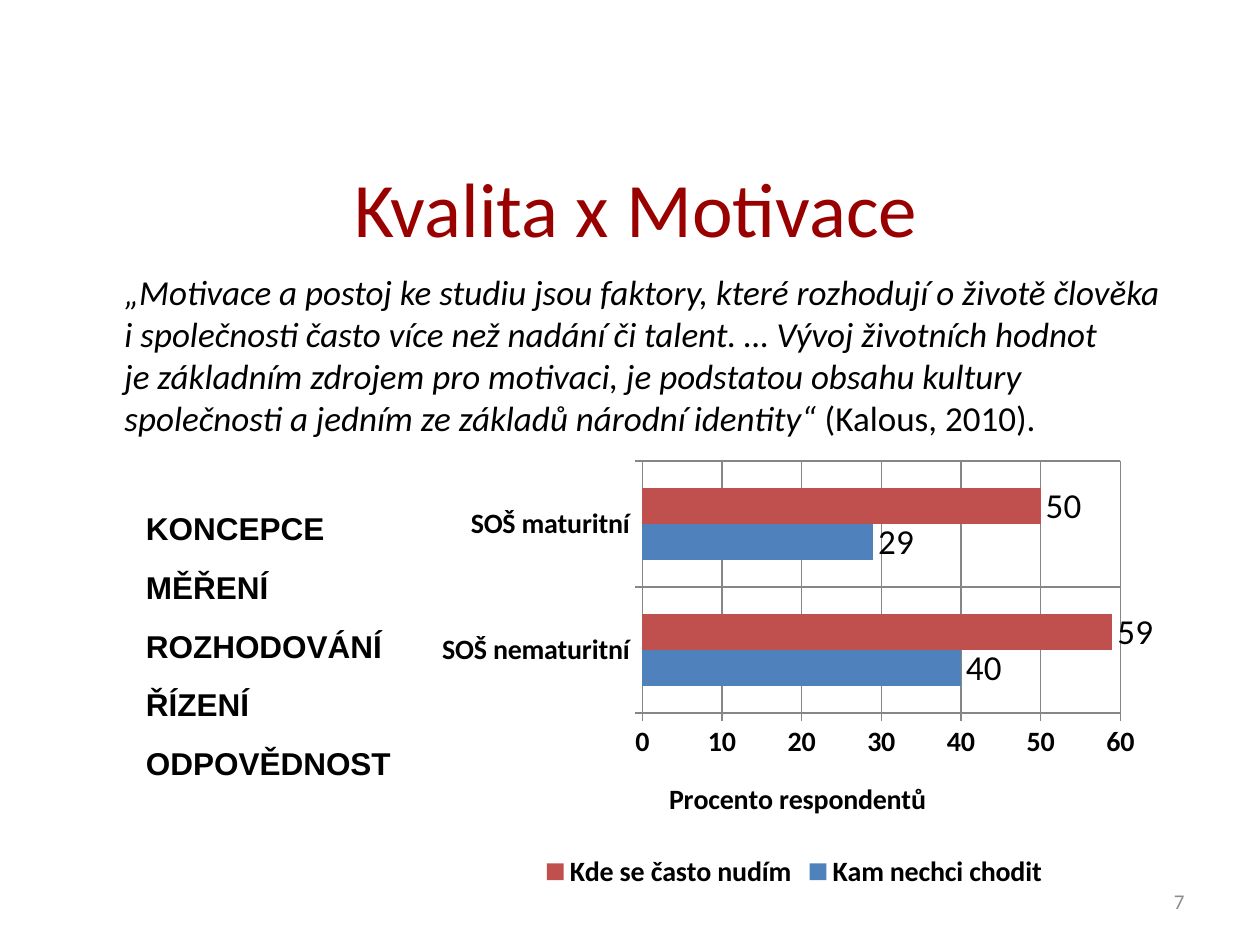
from dataclasses import dataclass

from lxml.etree import SubElement
from pptx import Presentation
from pptx.chart.data import CategoryChartData
from pptx.dml.color import RGBColor
from pptx.enum.chart import XL_CHART_TYPE as ChartType
from pptx.enum.chart import XL_LABEL_POSITION as LabelPosition
from pptx.enum.chart import XL_LEGEND_POSITION as LegendPosition
from pptx.enum.chart import XL_TICK_MARK as TickMark
from pptx.enum.text import MSO_ANCHOR as Anchor
from pptx.enum.text import PP_ALIGN as Align
from pptx.oxml.ns import qn
from pptx.util import Inches, Pt

BLACK, DARK_RED, GRAY, GRID = "000000", "990000", "8C8C8C", "868686"


@dataclass
class Area:
    left: float
    top: float
    width: float
    height: float

    def lengths(self) -> list:
        return [Inches(v) for v in (self.left, self.top, self.width, self.height)]


@dataclass
class Series:
    name: str
    values: tuple
    color: str


def rgb(value: str) -> RGBColor:
    return RGBColor.from_string(value)


def style_font(font, size: float, color: str = BLACK, name: str = "Calibri",
               bold: bool = False, italic: bool = False) -> None:
    font.size, font.name, font.bold, font.italic = Pt(size), name, bold, italic
    font.color.rgb = rgb(color)


def add_box(page, area: Area, anchor=Anchor.TOP):
    frame = page.shapes.add_textbox(*area.lengths()).text_frame
    frame.word_wrap = True
    frame.vertical_anchor = anchor
    return frame


def set_layout(parent, index: int, **settings) -> None:
    """Give a chart part a manual layout in fractions of the chart."""
    for old in parent.findall(qn("c:layout")):
        parent.remove(old)
    layout = SubElement(parent, qn("c:layout"))
    parent.insert(index, layout)
    manual = SubElement(layout, qn("c:manualLayout"))
    for tag, value in settings.items():
        SubElement(manual, qn(f"c:{tag}")).set("val", str(value))


def style_axis(axis) -> None:
    style_font(axis.tick_labels.font, 16, bold=True)
    axis.major_tick_mark = TickMark.OUTSIDE
    axis.minor_tick_mark = TickMark.NONE
    axis.has_major_gridlines = True
    for line in (axis.format.line, axis.major_gridlines.format.line):
        line.color.rgb = rgb(GRID)
        line.width = Pt(0.75)


def add_bar_chart(page, area: Area, categories: list, series_list: list) -> None:
    data = CategoryChartData()
    data.categories = categories
    for series in series_list:
        data.add_series(series.name, series.values)
    chart = page.shapes.add_chart(ChartType.BAR_CLUSTERED, *area.lengths(), data).chart
    chart.has_title = False
    style_font(chart.font, 10)

    # Bars and value labels
    plot = chart.plots[0]
    plot.gap_width, plot.overlap, plot.vary_by_categories = 150, 0, False
    for bars, series in zip(plot.series, series_list):
        bars.format.fill.solid()
        bars.format.fill.fore_color.rgb = rgb(series.color)
        labels = bars.data_labels
        labels.show_value = True
        labels.position = LabelPosition.OUTSIDE_END
        style_font(labels.font, 20)

    # Axes
    style_axis(chart.category_axis)
    values = chart.value_axis
    style_axis(values)
    values.minimum_scale, values.maximum_scale, values.major_unit = 0, 60, 10
    title = values.axis_title
    title.text_frame.text = "Procento respondentů"
    style_font(title.text_frame.paragraphs[0].runs[0].font, 16, bold=True)
    set_layout(title._element, 1, xMode="edge", yMode="edge", x=0.32, y=0.73)

    # Legend and plot area
    chart.has_legend = True
    chart.legend.position = LegendPosition.BOTTOM
    chart.legend.include_in_layout = False
    style_font(chart.legend.font, 16, bold=True)
    set_layout(plot._element.getparent(), 0, layoutTarget="inner", xMode="edge",
               yMode="edge", x=0.29, y=0.02, w=0.66, h=0.57)


def main() -> None:
    deck = Presentation()
    deck.slide_width, deck.slide_height = Inches(10), Inches(7.5)
    page = deck.slides.add_slide(deck.slide_layouts[5])

    # Title
    title = page.shapes.title
    title.left, title.top, title.width, title.height = Area(0.55, 1.25, 9, 0.78).lengths()
    title.text_frame.text = "Kvalita x Motivace"
    title.text_frame.vertical_anchor = Anchor.MIDDLE
    heading = title.text_frame.paragraphs[0]
    heading.alignment = Align.CENTER
    style_font(heading.runs[0].font, 44, DARK_RED)

    # Quotation with a hanging indent
    para = add_box(page, Area(0.51, 2.1, 9, 1.56)).paragraphs[0]
    para.text = (
        "\t„Motivace a postoj ke studiu jsou faktory, které rozhodují o životě člověka \v"
        "i společnosti často více než nadání či talent. … Vývoj životních hodnot \v"
        "je základním zdrojem pro motivaci, je podstatou obsahu kultury "
        "společnosti a jedním ze základů národní identity“"
    )
    indent = Inches(0.38)
    properties = para._p.get_or_add_pPr()
    properties.set("marL", str(indent))
    properties.set("indent", str(-indent))
    for span in para.runs:
        style_font(span.font, 20, italic=True)
    citation = para.add_run()
    citation.text = " (Kalous, 2010)."
    style_font(citation.font, 20)

    # Key terms
    terms = add_box(page, Area(1.06, 3.99, 2.17, 2.68))
    terms.text = "KONCEPCE\nMĚŘENÍ\nROZHODOVÁNÍ\nŘÍZENÍ\nODPOVĚDNOST"
    for number, para in enumerate(terms.paragraphs):
        para.space_before = Pt(6 if number else 0)
        para.space_after = Pt(6)
        style_font(para.runs[0].font, 18, name="Arial", bold=True)

    # Survey chart
    add_bar_chart(
        page, Area(3.43, 3.59, 5.75, 3.51), ["SOŠ nematuritní", "SOŠ maturitní"],
        [Series("Kam nechci chodit", (40, 29), "4F81BD"),
         Series("Kde se často nudím", (59, 50), "C0504D")],
    )

    # Page number
    para = add_box(page, Area(7.17, 6.95, 2.33, 0.4), Anchor.MIDDLE).paragraphs[0]
    para.text = "7"
    para.alignment = Align.RIGHT
    style_font(para.runs[0].font, 12, GRAY)

    deck.save("out.pptx")


if __name__ == "__main__":
    main()
